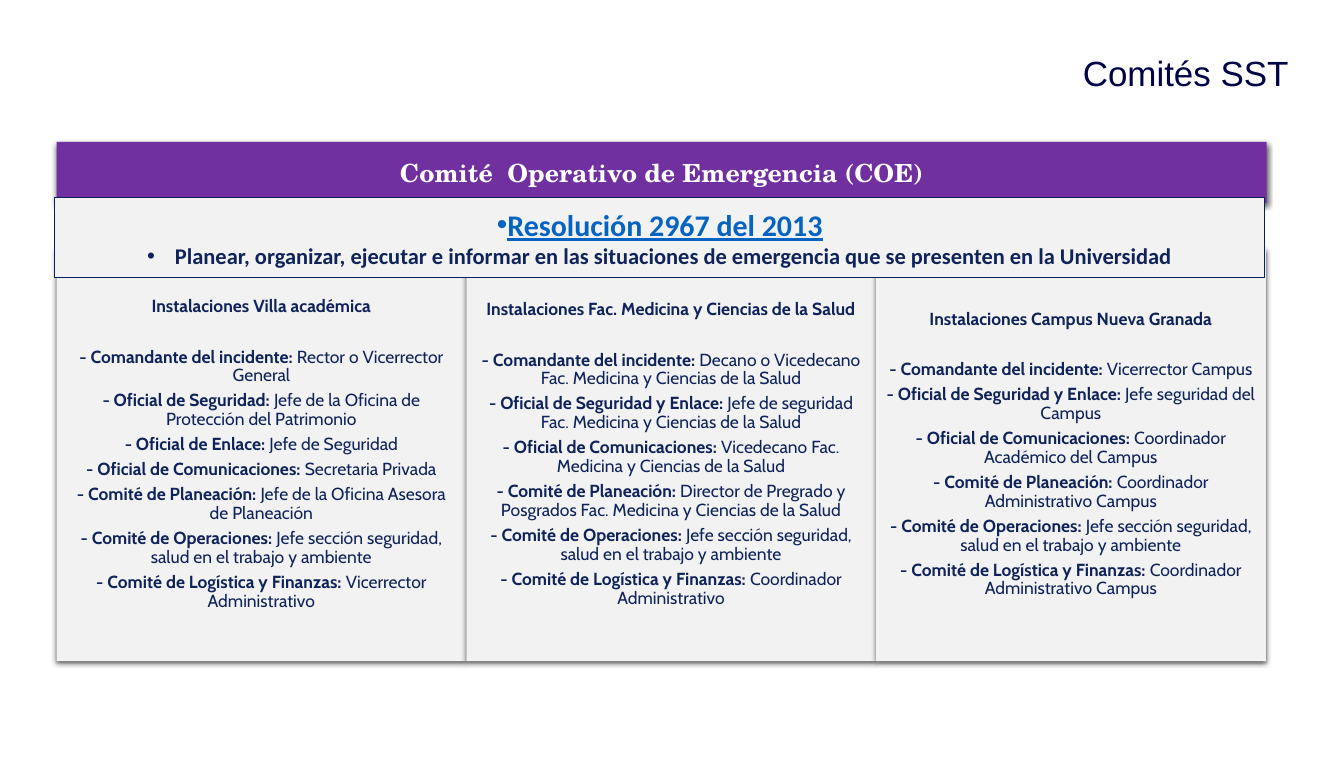
from lxml.etree import SubElement
from pptx import Presentation
from pptx.dml.color import RGBColor
from pptx.enum.shapes import MSO_SHAPE
from pptx.enum.text import MSO_ANCHOR, PP_ALIGN
from pptx.oxml.ns import qn
from pptx.util import Inches, Pt

NAVY = RGBColor(0x0F, 0x23, 0x5A)
TITLE_NAVY = RGBColor(0x00, 0x04, 0x47)
BORDER = RGBColor(0x00, 0x20, 0x60)
PURPLE = RGBColor(0x70, 0x30, 0xA0)
GRAY = RGBColor(0xF2, 0xF2, 0xF2)
LINK_BLUE = RGBColor(0x05, 0x63, 0xC1)
WHITE = RGBColor(0xFF, 0xFF, 0xFF)

TITLE = dict(name="Arial", size=Pt(28), color=TITLE_NAVY)
HEADER = dict(name="TeX Gyre Schola", size=Pt(20), bold=True, color=WHITE)
RESOLUTION = dict(name="Calibri", size=Pt(24), bold=True, underline=True,
                  color=LINK_BLUE)
PURPOSE = dict(name="Calibri", size=Pt(18), bold=True, color=NAVY)
ROLE = dict(name="Cabin", size=Pt(14), bold=True, color=NAVY)
PERSON = dict(ROLE, bold=False)

LEFT, WIDTH = 0.63, 13.47
COLUMN_TOP, COLUMN_HEIGHT = 2.76, 4.6
COLUMN_MARGINS = (0.11, 0.02)

SAFETY_SECTION = "Jefe sección seguridad, salud en el trabajo y ambiente"
COLUMNS = [
    (4.56, "Instalaciones Villa académica", [
        ("Comandante del incidente", "Rector o Vicerrector General"),
        ("Oficial de Seguridad",
         "Jefe de la Oficina de Protección del Patrimonio"),
        ("Oficial de Enlace", "Jefe de Seguridad"),
        ("Oficial de Comunicaciones", "Secretaria Privada"),
        ("Comité de Planeación", "Jefe de la Oficina Asesora de Planeación"),
        ("Comité de Operaciones", SAFETY_SECTION),
        ("Comité de Logística y Finanzas", "Vicerrector Administrativo"),
    ]),
    (4.56, "Instalaciones Fac. Medicina y Ciencias de la Salud", [
        ("Comandante del incidente",
         "Decano o Vicedecano Fac. Medicina y Ciencias de la Salud"),
        ("Oficial de Seguridad y Enlace",
         "Jefe de seguridad Fac. Medicina y Ciencias de la Salud"),
        ("Oficial de Comunicaciones",
         "Vicedecano Fac. Medicina y Ciencias de la Salud"),
        ("Comité de Planeación",
         "Director de Pregrado y Posgrados Fac. Medicina y Ciencias de la Salud"),
        ("Comité de Operaciones", SAFETY_SECTION),
        ("Comité de Logística y Finanzas", "Coordinador Administrativo"),
    ]),
    (4.34, "Instalaciones Campus Nueva Granada", [
        ("Comandante del incidente", "Vicerrector Campus"),
        ("Oficial de Seguridad y Enlace", "Jefe seguridad del Campus"),
        ("Oficial de Comunicaciones", "Coordinador Académico del Campus"),
        ("Comité de Planeación", "Coordinador Administrativo Campus"),
        ("Comité de Operaciones", SAFETY_SECTION),
        ("Comité de Logística y Finanzas", "Coordinador Administrativo Campus"),
    ]),
]


def set_frame(sp, margins):
    tf = sp.text_frame
    tf.word_wrap = True
    tf.vertical_anchor = MSO_ANCHOR.MIDDLE
    tf.margin_left = tf.margin_right = Inches(margins[0])
    tf.margin_top = tf.margin_bottom = Inches(margins[1])
    return tf


def add_shadow(sp):
    effects = sp._element.spPr.find(qn("a:effectLst"))
    shadow = SubElement(effects, qn("a:outerShdw"), blurRad=str(Pt(4.5)),
                        dist=str(Pt(1.5)), dir="5400000", rotWithShape="0")
    color = SubElement(shadow, qn("a:srgbClr"), val="000000")
    SubElement(color, qn("a:alpha"), val="63000")


def add_panel(s, box, fill, margins=(0.1, 0.05), line=None):
    """Add a bordered panel, or a shadowed one when no line is given."""
    sp = s.shapes.add_shape(MSO_SHAPE.RECTANGLE, *map(Inches, box))
    sp.shadow.inherit = False
    sp.fill.solid()
    sp.fill.fore_color.rgb = fill
    if line is None:
        sp.line.fill.background()
        add_shadow(sp)
    else:
        sp.line.color.rgb = line
        sp.line.width = Pt(0.75)
    return set_frame(sp, margins)


def add_paragraph(tf, runs, bullet_indent=None, **layout):
    p = tf.paragraphs[0]
    if p.runs:
        p = tf.add_paragraph()
    for key, value in dict(dict(alignment=PP_ALIGN.CENTER), **layout).items():
        setattr(p, key, value)
    if bullet_indent is not None:
        pPr = p._p.get_or_add_pPr()
        pPr.set("marL", str(Inches(bullet_indent)))
        pPr.set("indent", str(-Inches(bullet_indent)))
        SubElement(pPr, qn("a:buFont"), typeface="Arial")
        SubElement(pPr, qn("a:buChar"), char="•")
    for text, style in runs:
        r = p.add_run()
        r.text = text
        for key, value in style.items():
            if key == "color":
                r.font.color.rgb = value
            else:
                setattr(r.font, key, value)


def add_column(s, left, width, heading, members):
    tf = add_panel(s, (left, COLUMN_TOP, width, COLUMN_HEIGHT), GRAY,
                   COLUMN_MARGINS)
    add_paragraph(tf, [(heading, ROLE)], line_spacing=0.9, space_after=Pt(25))
    for role, person in members:
        add_paragraph(tf, [(f"- {role}: ", ROLE), (person, PERSON)],
                      line_spacing=0.9, space_after=Pt(4.9))


def main():
    prs = Presentation()
    prs.slide_width, prs.slide_height = Inches(14.96), Inches(8.66)
    s = prs.slides.add_slide(prs.slide_layouts[6])

    # Slide title
    sp = s.shapes.add_textbox(*map(Inches, (2.05, 0.59, 12.29, 0.45)))
    add_paragraph(set_frame(sp, (0, 0)), [("Comités SST", TITLE)],
                  alignment=PP_ALIGN.RIGHT, line_spacing=Pt(32))

    # One column per site
    left = LEFT
    for width, heading, members in COLUMNS:
        add_column(s, left, width, heading, members)
        left += width

    # Committee header
    tf = add_panel(s, (LEFT, 1.58, WIDTH, 0.68), PURPLE, (0.27, 0.07))
    add_paragraph(tf, [("Comité  Operativo de Emergencia (COE)", HEADER)])

    # Resolution and purpose
    tf = add_panel(s, (0.61, 2.2, WIDTH, 0.89), GRAY, line=BORDER)
    add_paragraph(tf, [("Resolución 2967 del 2013", RESOLUTION)],
                  bullet_indent=0)
    add_paragraph(tf, [("Planear, organizar, ejecutar e informar en las "
                        "situaciones de emergencia que se presenten en la "
                        "Universidad", PURPOSE)], bullet_indent=0.31)

    prs.save("out.pptx")


if __name__ == "__main__":
    main()
